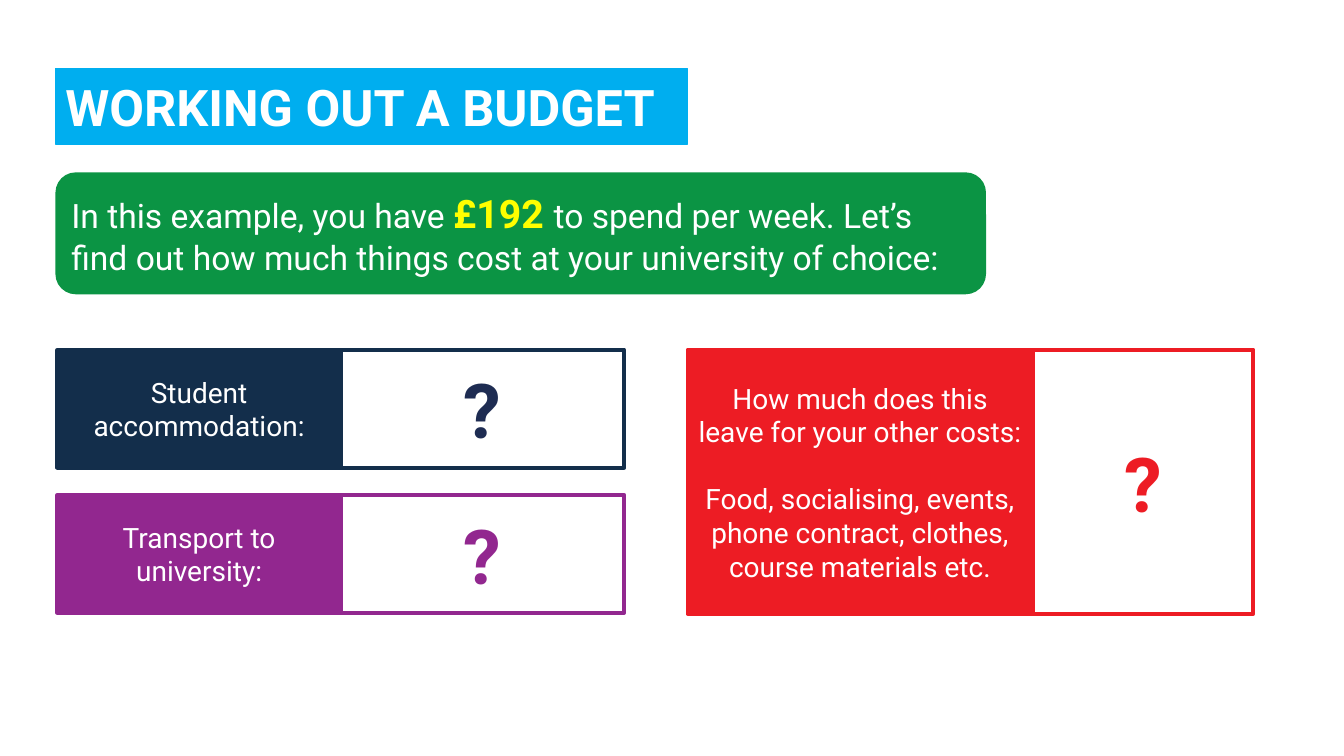
import pptx
import pptx.util
import pptx.dml.color
import pptx.enum.shapes
import pptx.enum.text

Inches, Pt = pptx.util.Inches, pptx.util.Pt
Align = pptx.enum.text.PP_ALIGN
Kind = pptx.enum.shapes.MSO_SHAPE

# Content
TITLE = "WORKING OUT A BUDGET"
INTRO = [
    ("In this example, you have ", {}),
    ("£192 ", {"size": 28, "color": "FFFF00", "bold": True}),
    ("to spend per week. Let’s find out how much things cost "
     "at your university of choice:", {}),
]
# Label paragraphs, fill, mark colour, left, top, label width, mark width, height
COSTS = [
    (["Student accommodation:"],
     "132E4B", "1E2C52", 0.57, 3.47, 2.81, 2.81, 1.17),
    (["Transport to university:"],
     "92278F", "92278F", 0.57, 4.91, 2.81, 2.81, 1.17),
    (["How much does this leave for your other costs:",
      "Food, socialising, events, phone contract, clothes, "
      "course materials etc."],
     "ED1C24", "ED1C24", 6.82, 3.47, 3.42, 2.19, 2.62),
]

deck = pptx.Presentation()
deck.slide_width, deck.slide_height = Inches(13.33), Inches(7.5)
slide = deck.slides.add_slide(deck.slide_layouts[6])


def rgb(code):
    return pptx.dml.color.RGBColor.from_string(code)


def add_box(left, top, width, height, fill=None, line=None, weight=3,
            kind=Kind.RECTANGLE):
    box = slide.shapes.add_shape(
        kind, Inches(left), Inches(top), Inches(width), Inches(height))
    box.shadow.inherit = False
    if fill:
        box.fill.solid()
        box.fill.fore_color.rgb = rgb(fill)
    else:
        box.fill.background()
    if line:
        box.line.color.rgb = rgb(line)
        box.line.width = Pt(weight)
    else:
        box.line.fill.background()
    frame = box.text_frame
    frame.word_wrap = True
    frame.vertical_anchor = pptx.enum.text.MSO_ANCHOR.MIDDLE
    return frame


def add_text(para, text, size=20, color="FFFFFF", bold=False,
             align=Align.CENTER):
    para.alignment = align
    run = para.add_run()
    run.text = text
    font = run.font
    font.name, font.size, font.bold = "Roboto", Pt(size), bold
    font.color.rgb = rgb(color)


# Introduction
frame = add_box(0.55, 1.71, 9.23, 1.21, fill="0B9444",
                kind=Kind.ROUNDED_RECTANGLE)
for text, style in INTRO:
    add_text(frame.paragraphs[0], text,
             **{"size": 24, "align": Align.LEFT, **style})

# Cost labels, each with a box for the answer on its right
for label, fill, mark, left, top, wide, rest, high in COSTS:
    frame = add_box(left, top, wide, high, fill=fill, line=fill)
    for i, text in enumerate(label):
        para = frame.paragraphs[0] if i == 0 else frame.add_paragraph()
        if i:
            para.space_before = Pt(24)
        add_text(para, text)
    frame = add_box(left + wide, top, rest, high, line=fill)
    add_text(frame.paragraphs[0], "?", size=54, color=mark, bold=True)

# Title
frame = add_box(0.55, 0.68, 6.27, 0.75, fill="00AEEF", line="00AEEF", weight=1)
add_text(frame.paragraphs[0], TITLE, size=36, bold=True, align=Align.LEFT)

deck.save("out.pptx")
